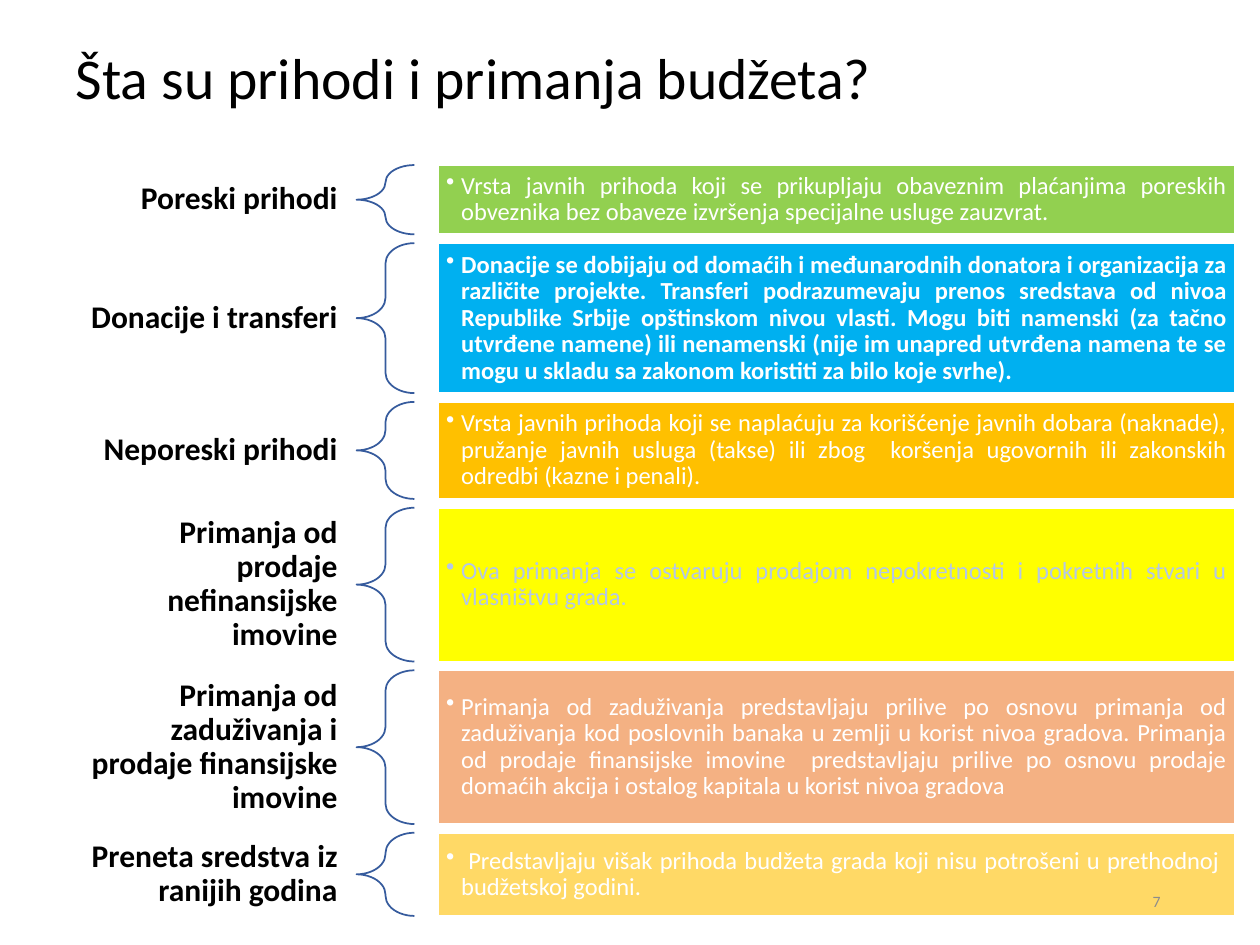
from dataclasses import dataclass

import lxml.etree
import pptx
import pptx.dml.color
import pptx.enum.shapes
import pptx.enum.text
import pptx.oxml.ns
import pptx.util

Inches = pptx.util.Inches
Align = pptx.enum.text.PP_ALIGN
Shapes = pptx.enum.shapes.MSO_SHAPE


@dataclass(frozen=True)
class Theme:
    font: str = "Calibri"
    ink: str = "000000"
    light: str = "FFFFFF"
    pale_blue: str = "B4C7E7"
    brace: str = "365B9D"
    page_number: str = "8C8C8C"
    green: str = "92D050"
    blue: str = "00B0F0"
    amber: str = "FFC000"
    yellow: str = "FFFF00"
    peach: str = "F4B183"
    sand: str = "FFD966"
    title_size: float = 33
    label_size: float = 18
    body_size: float = 14
    number_size: float = 9


THEME = Theme()


@dataclass(frozen=True)
class Category:
    label: str
    description: str
    height: float
    fill: str
    color: str = THEME.light
    bold: bool = False


CATEGORIES = [
    Category("Poreski prihodi",
             "Vrsta javnih prihoda koji se prikupljaju obaveznim plaćanjima poreskih "
             "obveznika bez obaveze izvršenja specijalne usluge zauzvrat.",
             0.55, THEME.green),
    Category("Donacije i transferi",
             "Donacije se dobijaju od domaćih i međunarodnih donatora i organizacija za "
             "različite projekte. Transferi podrazumevaju prenos sredstava od nivoa "
             "Republike Srbije opštinskom nivou vlasti. Mogu biti namenski (za tačno "
             "utvrđene namene) ili nenamenski (nije im unapred utvrđena namena te se "
             "mogu u skladu sa zakonom koristiti za bilo koje svrhe).",
             1.19, THEME.blue, bold=True),
    Category("Neporeski prihodi",
             "Vrsta javnih prihoda koji se naplaćuju za korišćenje javnih dobara "
             "(naknade), pružanje javnih usluga (takse) ili zbog  koršenja ugovornih ili "
             "zakonskih odredbi (kazne i penali).",
             0.77, THEME.amber),
    Category("Primanja od prodaje nefinansijske imovine",
             "Ova primanja se ostvaruju prodajom nepokretnosti i pokretnih stvari u "
             "vlasništvu grada.",
             1.22, THEME.yellow, color=THEME.pale_blue),
    Category("Primanja od zaduživanja i prodaje finansijske imovine",
             "Primanja od zaduživanja predstavljaju prilive po osnovu primanja od "
             "zaduživanja kod poslovnih banaka u zemlji u korist nivoa gradova. Primanja "
             "od prodaje finansijske imovine  predstavljaju prilive po osnovu prodaje "
             "domaćih akcija i ostalog kapitala u korist nivoa gradova",
             1.22, THEME.peach),
    Category("Preneta sredstva iz ranijih godina",
             " Predstavljaju višak prihoda budžeta grada koji nisu potrošeni u "
             "prethodnoj  budžetskoj godini.",
             0.66, THEME.sand),
]


def rgb(color):
    return pptx.dml.color.RGBColor.from_string(color)


def write(shape, text, size, color, align, bold=False, spacing=0.9, insets=(0.1, 0.05)):
    """Fill a shape with one wrapped, vertically centred paragraph and return it."""
    frame = shape.text_frame
    frame.word_wrap = True
    frame.auto_size = pptx.enum.text.MSO_AUTO_SIZE.NONE
    frame.vertical_anchor = pptx.enum.text.MSO_ANCHOR.MIDDLE
    frame.margin_left = frame.margin_right = Inches(insets[0])
    frame.margin_top = frame.margin_bottom = Inches(insets[1])
    paragraph = frame.paragraphs[0]
    paragraph.alignment = align
    paragraph.line_spacing = spacing
    run = paragraph.add_run()
    run.text = text
    run.font.name = THEME.font
    run.font.size = pptx.util.Pt(size)
    run.font.bold = bold
    run.font.color.rgb = rgb(color)
    return paragraph


def add_bullet(paragraph, indent):
    properties = paragraph._p.get_or_add_pPr()
    properties.set("marL", str(indent))
    properties.set("indent", str(-indent))
    bullet = lxml.etree.SubElement(properties, pptx.oxml.ns.qn("a:buChar"))
    bullet.set("char", "•")


def add_outlined_shape(slide, kind, box, line_color):
    shape = slide.shapes.add_shape(kind, *box)
    shape.shadow.inherit = False
    shape.line.color.rgb = rgb(line_color)
    shape.line.width = pptx.util.Pt(1)
    return shape


def place_title(slide, text, left, top, width, height):
    title = slide.shapes.title
    title.left, title.top, title.width, title.height = left, top, width, height
    write(title, text, THEME.title_size, THEME.ink, Align.LEFT)


def place_category(slide, category, left, top, width, height):
    """Place a label, a brace and a description bar side by side."""
    label_width = Inches(2.32)
    brace_left = left + Inches(2.33)
    bar_left = left + Inches(2.98)

    label = slide.shapes.add_textbox(left, top, label_width, height)
    write(label, category.label, THEME.label_size, THEME.ink, Align.RIGHT,
          bold=True, insets=(0.14, 0.05))

    brace = add_outlined_shape(slide, Shapes.LEFT_BRACE,
                               (brace_left, top, Inches(0.46), height), THEME.brace)
    brace.fill.background()
    brace.adjustments[0] = 0.35

    bar = add_outlined_shape(slide, Shapes.RECTANGLE,
                             (bar_left, top, left + width - bar_left, height), THEME.light)
    bar.fill.solid()
    bar.fill.fore_color.rgb = rgb(category.fill)
    paragraph = write(bar, category.description, THEME.body_size, category.color,
                      Align.JUSTIFY, bold=category.bold, insets=(0.06, 0.06))
    add_bullet(paragraph, Inches(0.12))


def place_category_list(slide, left, top, width, gap):
    for category in CATEGORIES:
        height = Inches(category.height)
        place_category(slide, category, left, top, width, height)
        top += height + gap


def place_page_number(slide, number, left, top, width, height):
    box = slide.shapes.add_textbox(left, top, width, height)
    write(box, number, THEME.number_size, THEME.page_number, Align.RIGHT, spacing=1.0)


def main():
    presentation = pptx.Presentation()
    presentation.slide_width, presentation.slide_height = Inches(10), Inches(7.5)
    slide = presentation.slides.add_slide(presentation.slide_layouts.get_by_name("Title Only"))
    place_title(slide, "Šta su prihodi i primanja budžeta?",
                Inches(0.5), Inches(0.3), Inches(9), Inches(0.68))
    place_category_list(slide, Inches(0.5), Inches(1.31), Inches(9.3), Inches(0.07))
    place_page_number(slide, "7", Inches(7.06), Inches(6.95), Inches(2.25), Inches(0.4))
    presentation.save("out.pptx")


if __name__ == "__main__":
    main()
